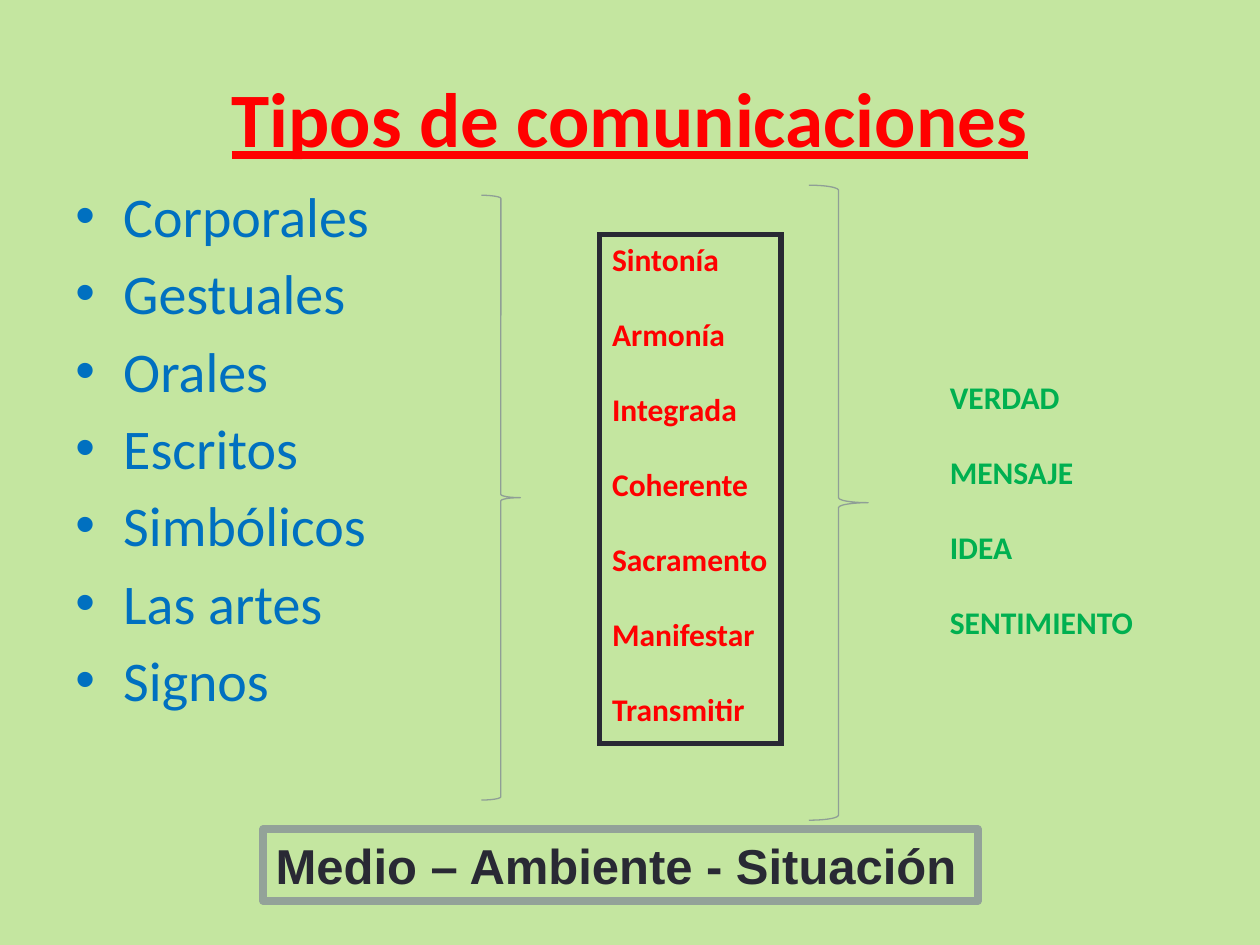
from lxml import etree
from pptx import Presentation
from pptx.dml.color import RGBColor
from pptx.enum import shapes, text
from pptx.oxml.ns import qn
from pptx.util import Inches, Pt

HUES = {
    "back": "C4E6A0", "red": "FF0000", "blue": "0070C0", "green": "00B050",
    "dark": "292934", "grey": "93A299", "brace": "8F9F96",
}
KINDS = ["Corporales", "Gestuales", "Orales", "Escritos", "Simbólicos",
         "Las artes", "Signos"]
TRAITS = ["Sintonía", "Armonía", "Integrada", "Coherente", "Sacramento",
          "Manifestar", "Transmitir"]
GOALS = ["VERDAD", "MENSAJE", "IDEA", "SENTIMIENTO"]


def hue(name):
    return RGBColor.from_string(HUES[name])


def add_text(slide, box, lines, color, gap=0, wrap=True,
             anchor=text.MSO_ANCHOR.TOP, align=text.PP_ALIGN.LEFT, **font):
    """Add a text box with one paragraph per line, gap points apart."""
    shape = slide.shapes.add_textbox(*map(Inches, box))
    frame = shape.text_frame
    frame.word_wrap = wrap
    frame.vertical_anchor = anchor
    frame.text = "\n".join(lines)
    for i, para in enumerate(frame.paragraphs):
        para.alignment = align
        para.space_before = Pt(gap if i else 0)
        run = para.runs[0].font
        run.color.rgb = hue(color)
        for key, value in font.items():
            setattr(run, key, value)
    return shape


def add_bullets(shape, indent):
    for para in shape.text_frame.paragraphs:
        props = para._p.get_or_add_pPr()
        props.set("marL", str(Inches(indent)))
        props.set("indent", str(-Inches(indent)))
        etree.SubElement(props, qn("a:buFont")).set("typeface", "Arial")
        etree.SubElement(props, qn("a:buChar")).set("char", "•")


def set_line(shape, color, width, join="round"):
    shape.line.color.rgb = hue(color)
    shape.line.width = Pt(width)
    etree.SubElement(shape.line._get_or_add_ln(), qn(f"a:{join}"))


def add_brace(slide, box):
    brace = slide.shapes.add_shape(
        shapes.MSO_SHAPE.RIGHT_BRACE, *map(Inches, box))
    brace.shadow.inherit = False
    brace.fill.background()
    set_line(brace, "brace", 0.75)


def main():
    deck = Presentation()
    deck.slide_width, deck.slide_height = Inches(10), Inches(7.5)
    slide = deck.slides.add_slide(deck.slide_layouts[6])
    slide.background.fill.solid()
    slide.background.fill.fore_color.rgb = hue("back")

    add_text(slide, (0.5, 0.3, 9, 1.25), ["Tipos de comunicaciones"], "red",
             anchor=text.MSO_ANCHOR.MIDDLE, align=text.PP_ALIGN.CENTER,
             name="Calibri", size=Pt(44), bold=True, underline=True)
    kinds = add_text(slide, (0.5, 1.39, 9, 5.31), KINDS, "blue", gap=5.8,
                     name="Calibri", size=Pt(32))
    add_bullets(kinds, 0.38)

    add_brace(slide, (3.82, 1.55, 0.31, 4.8))
    add_brace(slide, (6.42, 1.47, 0.47, 5.04))

    small = {"gap": 21.2, "wrap": False, "name": "Calibri",
             "size": Pt(18), "bold": True}
    traits = add_text(slide, (4.76, 1.86, 1.44, 4.04), TRAITS, "red", **small)
    set_line(traits, "dark", 3, "miter")
    add_text(slide, (7.44, 2.95, 1.67, 2.22), GOALS, "green", **small)

    setting = add_text(slide, (2.09, 6.58, 5.67, 0.57),
                       ["Medio – Ambiente - Situación"], "dark",
                       name="Arial", size=Pt(28), bold=True)
    set_line(setting, "grey", 4.5)
    deck.save("out.pptx")


if __name__ == "__main__":
    main()
